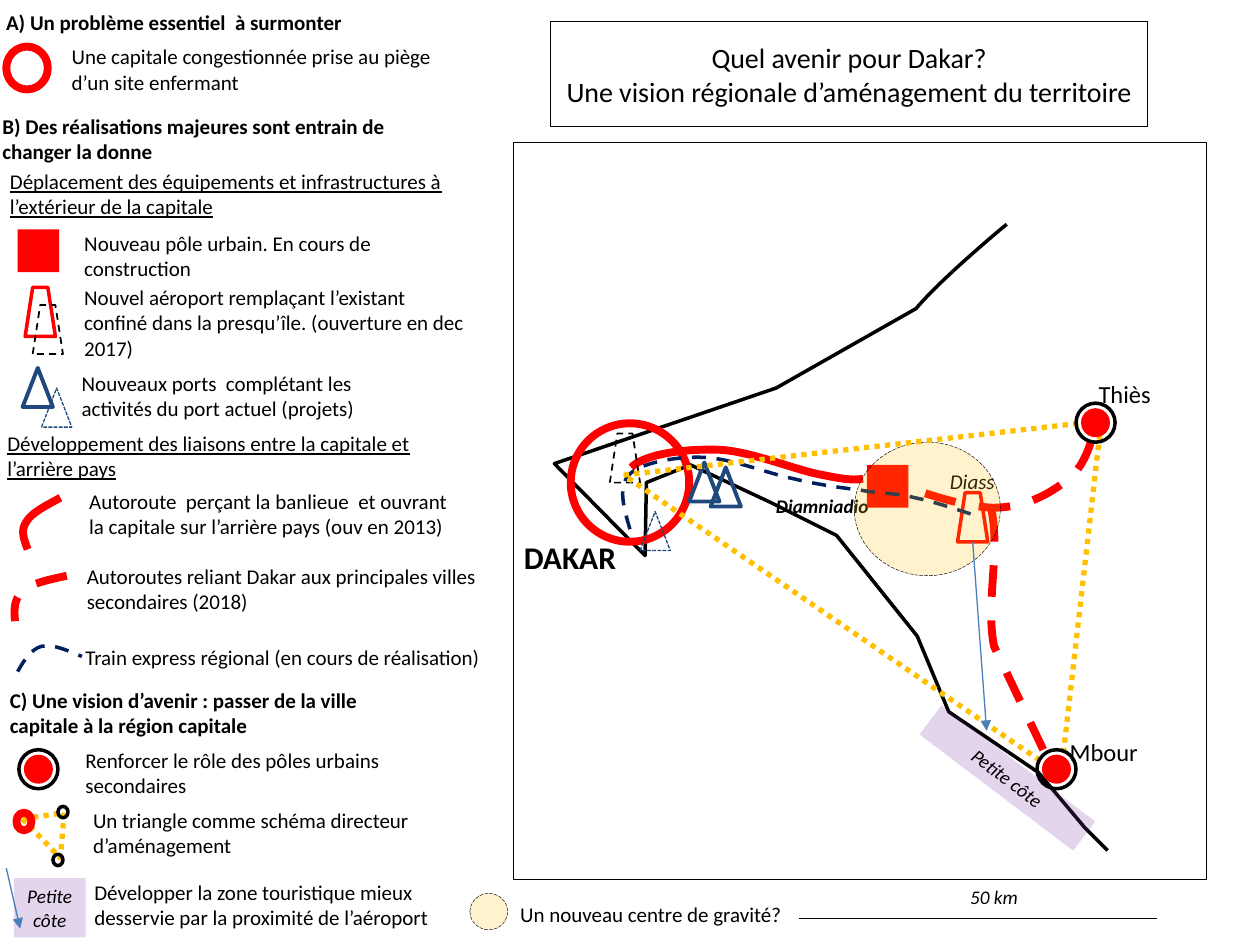
"""Builds the map and legend slide on the regional future of Dakar."""
from dataclasses import dataclass

from pptx import Presentation
from pptx import util as u
from pptx.dml.color import RGBColor
from pptx.enum import dml, shapes, text
from pptx.oxml import ns, xmlchemy


@dataclass(frozen=True)
class Pen:
    """An outline: colour, width in points and dash."""
    color: str
    width: float
    dash: object = None


class Theme:
    """Colours, outlines and type sizes of the slide."""
    font = "Calibri"
    black, red, gold, purple = "000000", "FF0000", "FFC000", "7030A0"
    navy, blue, arrow = "002060", "1F497D", "4B7EBC"
    title, city, place, legend, small = 16, 18, 14, 12, 11
    tint = 20
    coast = Pen(black, 2)
    frame = Pen(black, 0.25)
    border = Pen(black, 0.75)
    old_airport = Pen(black, 1, dml.MSO_LINE.DASH)
    new_airport = Pen(red, 2)
    road = Pen(red, 4.5)
    future_road = Pen(red, 4.5, dml.MSO_LINE.DASH)
    train = Pen(navy, 2, dml.MSO_LINE.DASH)
    old_port = Pen(blue, 0.75, dml.MSO_LINE.SQUARE_DOT)
    new_port = Pen(blue, 2.25)
    triangle = Pen(gold, 3, dml.MSO_LINE.ROUND_DOT)
    zone = Pen(black, 0.25, dml.MSO_LINE.LONG_DASH)
    access = Pen(arrow, 0.75)


KIND = shapes.MSO_SHAPE
AIRPORT, PORT, TOWN = (0.24, 0.39), (0.24, 0.31), (0.31, 0.31)

COAST = [(8.79, 6.75), (8.61, 6.57), (8.24, 6.13), (7.53, 5.65), (7.28, 5.05),
         (6.64, 4.25), (6.12, 3.99), (5.48, 3.69), (5.13, 3.83), (5.12, 4.41),
         (4.4, 3.68), (6.16, 3.08), (7.27, 2.45), (7.48, 2.2, 7.99, 1.78, 7.99, 1.78)]
MOTORWAY = [(5.01, 3.71), (5.12, 3.6, 5.45, 3.56, 5.71, 3.57),
            (5.96, 3.58, 6.34, 3.74, 6.53, 3.77), (6.72, 3.81, 6.79, 3.81, 6.85, 3.8)]
ROAD_THIES = [(6.93, 3.77), (7.28, 3.9, 7.62, 4.02, 7.88, 4.03),
              (8.14, 4.03, 8.33, 3.92, 8.47, 3.81), (8.6, 3.71, 8.65, 3.55, 8.69, 3.4)]
ROAD_MBOUR = [(7.87, 4.05), (7.94, 4.4, 7.82, 4.79, 7.89, 5.13), (8.28, 5.95)]
TRAIN = [(5, 4.2), (4.95, 4.03, 4.9, 3.86, 5, 3.76), (5.1, 3.67, 5.38, 3.62, 5.59, 3.63),
         (5.81, 3.64, 6.1, 3.76, 6.3, 3.8), (6.51, 3.85, 6.67, 3.87, 6.83, 3.89),
         (6.99, 3.92, 7.11, 3.91, 7.26, 3.95), (7.41, 3.98, 7.58, 4.04, 7.74, 4.09)]
MASTER_PLAN = [(4.95, 3.77), (8.74, 3.34), (8.42, 6.15)]

KEY_MOTORWAY = [(0.22, 4.36), (0.19, 4.28, 0.16, 4.21, 0.21, 4.14),
                (0.25, 4.07, 0.37, 4.01, 0.48, 3.95)]
KEY_ROAD = [(0.53, 4.57), (0.39, 4.6, 0.25, 4.63, 0.18, 4.69),
            (0.11, 4.75, 0.11, 4.85, 0.12, 4.93)]
KEY_TRAIN = [(0.14, 5.33), (0.19, 5.24, 0.25, 5.15, 0.33, 5.13),
             (0.42, 5.11, 0.53, 5.16, 0.65, 5.21)]
KEY_PLAN = [(0.18, 6.5), (0.51, 6.45), (0.48, 6.81)]

HEADINGS = [("A) Un problème essentiel  à surmonter", -0.05, 0.03, 2.9, 0.3),
            ("B) Des réalisations majeures sont entrain de changer la donne", -0.08, 0.85, 3.79, 0.5),
            ("C) Une vision d’avenir : passer de la ville capitale à la région capitale",
             -0.02, 5.41, 3.44, 0.5)]
SUBHEADINGS = [("Déplacement des équipements et infrastructures à l’extérieur de la capitale",
                -0.02, 1.29, 3.81, 0.5),
               ("Développement des liaisons entre la capitale et l’arrière pays", -0.04, 3.37, 3.75, 0.5)]
ENTRIES = [
    ("Une capitale congestionnée prise au piège d’un site enfermant", 0.47, 0.3, 3.26, 0.5),
    ("Nouveau pôle urbain. En cours de construction", 0.57, 1.78, 3.31, 0.5),
    ("Nouvel aéroport remplaçant l’existant confiné dans la presqu’île. (ouverture en dec 2017)",
     0.57, 2.21, 3.23, 0.71),
    ("Nouveaux ports  complétant les activités du port actuel (projets)", 0.55, 2.89, 2.79, 0.5),
    ("Autoroute  perçant la banlieue  et ouvrant la capitale sur l’arrière pays (ouv en 2013)",
     0.61, 3.83, 3.1, 0.5),
    ("Autoroutes reliant Dakar aux principales villes secondaires (2018)", 0.59, 4.42, 3.35, 0.5),
    ("Renforcer le rôle des pôles urbains secondaires", 0.58, 5.88, 3.02, 0.5),
    ("Un triangle comme schéma directeur d’aménagement", 0.64, 6.36, 3.14, 0.5),
    ("Développer la zone touristique mieux desservie par la proximité de l’aéroport",
     0.65, 6.93, 3.02, 0.5),
    ("Un nouveau centre de gravité?", 4.03, 7.11, 2.83, 0.3)]


def draw_line(line, pen):
    """Applies a pen to an outline, or hides it."""
    if pen is None:
        line.fill.background()
        return
    line.color.rgb = RGBColor.from_string(pen.color)
    line.width = u.Pt(pen.width)
    if pen.dash:
        line.dash_style = pen.dash


def write(box, words, size, wrap=True, align=None, **style):
    """Fills a text frame and formats its runs."""
    frame = box.text_frame
    frame.text = words
    frame.word_wrap = wrap
    frame.auto_size = text.MSO_AUTO_SIZE.SHAPE_TO_FIT_TEXT
    for para in frame.paragraphs:
        para.alignment = align
        for span in para.runs:
            span.font.name, span.font.size = Theme.font, u.Pt(size)
            span.font.color.rgb = RGBColor.from_string(Theme.black)
            for name, value in style.items():
                setattr(span.font, name, value)


def add_label(canvas, words, x, y, w, h, size=Theme.legend, **style):
    """Adds a text box."""
    box = canvas.add_textbox(*map(u.Inches, (x, y, w, h)))
    write(box, words, size, **style)


def add_mark(canvas, kind, x, y, w, h, pen=None, fill=None, alpha=None):
    """Adds a preset shape, optionally tinted."""
    mark = canvas.add_shape(kind, *map(u.Inches, (x, y, w, h)))
    mark.shadow.inherit = False
    draw_line(mark.line, pen)
    if fill is None:
        mark.fill.background()
        return mark
    mark.fill.solid()
    mark.fill.fore_color.rgb = RGBColor.from_string(fill)
    if alpha:
        color = mark.element.xpath("./p:spPr/a:solidFill/a:srgbClr")[0]
        xmlchemy.OxmlElement("a:alpha")
        color.append(color.makeelement(ns.qn("a:alpha"), {"val": str(alpha * 1000)}))
    return mark


def add_route(canvas, steps, pen, close=False):
    """Adds an outline whose steps are points or Bézier triples."""
    start, *rest = steps
    points = [step[i:i + 2] for step in rest for i in range(0, len(step), 2)]
    builder = canvas.build_freeform(*map(u.Inches, start), scale=1.0)
    builder.add_line_segments([tuple(map(u.Inches, point)) for point in points], close=close)
    route = builder.convert_to_shape()
    segments = iter(route.element.xpath(".//a:path/a:lnTo"))
    for step in rest:
        segment = next(segments)
        if len(step) == 6:
            curve = xmlchemy.OxmlElement("a:cubicBezTo")
            segment.addprevious(curve)
            for piece in (segment, next(segments), next(segments)):
                curve.append(piece[0])
                piece.getparent().remove(piece)
    route.shadow.inherit = False
    route.fill.background()
    draw_line(route.line, pen)


def add_straight(canvas, start, end, pen, arrow=False):
    """Adds a straight connector, optionally with an arrowhead."""
    link = canvas.add_connector(shapes.MSO_CONNECTOR.STRAIGHT, *map(u.Inches, start + end))
    draw_line(link.line, pen)
    link.element.spPr.append(xmlchemy.OxmlElement("a:effectLst"))
    if arrow:
        head = xmlchemy.OxmlElement("a:tailEnd")
        head.set("type", "triangle")
        link.line._get_or_add_ln().append(head)


def add_town(canvas, x, y):
    """Adds a secondary town: a red dot in a black ring."""
    add_mark(canvas, KIND.OVAL, x, y, *TOWN, pen=Theme.coast)
    add_mark(canvas, KIND.OVAL, x + 0.04, y + 0.04, 0.23, 0.23, fill=Theme.red)


def add_tourist_area(canvas, x, y, w, h, angle=0):
    """Adds the tinted block naming the tourist coast."""
    area = add_mark(canvas, KIND.RECTANGLE, x, y, w, h, fill=Theme.purple, alpha=Theme.tint)
    area.rotation = angle
    write(area, "Petite côte", Theme.small, align=text.PP_ALIGN.CENTER, italic=True)


def add_title(title):
    """Moves and formats the title placeholder."""
    title.left, title.top, title.width, title.height = map(u.Inches, (4.37, 0.27, 4.74, 0.64))
    draw_line(title.line, Theme.border)
    write(title, "Quel avenir pour Dakar?\nUne vision régionale d’aménagement du territoire",
          Theme.title, wrap=False, align=text.PP_ALIGN.CENTER)


def add_map(canvas):
    """Draws the map with its places and routes."""
    add_route(canvas, COAST, Theme.coast)
    add_mark(canvas, KIND.TRAPEZOID, 7.6, 3.91, *AIRPORT, pen=Theme.new_airport)
    add_route(canvas, MOTORWAY, Theme.road)
    add_mark(canvas, KIND.OVAL, 4.53, 3.36, 0.94, 0.94, pen=Theme.road)
    add_mark(canvas, KIND.TRAPEZOID, 4.84, 3.44, *AIRPORT, pen=Theme.old_airport)
    add_label(canvas, "DAKAR", 4.06, 4.22, 0.94, 0.4, Theme.city, wrap=False, bold=True)
    add_label(canvas, "Diass", 7.44, 3.67, 0.56, 0.3, wrap=False, italic=True)
    add_label(canvas, "Thiès", 8.62, 2.96, 0.62, 0.34, Theme.place, wrap=False)
    add_label(canvas, "Mbour", 8.39, 5.8, 0.75, 0.34, Theme.place, wrap=False)
    add_straight(canvas, (6.34, 7.29), (9.18, 7.29), Theme.border)
    add_label(canvas, "50 km", 7.6, 6.98, 0.59, 0.29, Theme.small, wrap=False, italic=True)
    for road in (ROAD_THIES, ROAD_MBOUR):
        add_route(canvas, road, Theme.future_road)
    add_mark(canvas, KIND.ISOSCELES_TRIANGLE, 5.08, 4.06, *PORT, pen=Theme.old_port)
    add_label(canvas, "Diamniadio", 6.06, 3.87, 0.94, 0.29, Theme.small,
              wrap=False, bold=True, italic=True)
    add_mark(canvas, KIND.RECTANGLE, 6.88, 3.69, 0.33, 0.34, fill=Theme.red)
    add_route(canvas, TRAIN, Theme.train)
    for x, y in ((5.47, 3.67), (5.64, 3.71)):
        add_mark(canvas, KIND.ISOSCELES_TRIANGLE, x, y, *PORT, pen=Theme.new_port)
    add_tourist_area(canvas, 7.23, 6.03, 1.53, 0.29, 37.1)
    add_mark(canvas, KIND.OVAL, 6.78, 3.51, 1.16, 1.06, Theme.zone, Theme.gold, Theme.tint)
    add_route(canvas, MASTER_PLAN, Theme.triangle, close=True)
    add_straight(canvas, (7.72, 4.3), (7.83, 5.8), Theme.access, arrow=True)
    add_town(canvas, 8.54, 3.2)
    add_town(canvas, 8.23, 5.95)
    add_mark(canvas, KIND.RECTANGLE, 4.07, 1.13, 5.5, 5.85, pen=Theme.frame)


def add_legend(canvas):
    """Draws the legend texts and their symbols."""
    for entry in HEADINGS:
        add_label(canvas, *entry, bold=True)
    for entry in SUBHEADINGS:
        add_label(canvas, *entry, underline=True)
    for entry in ENTRIES:
        add_label(canvas, *entry)
    add_label(canvas, "Train express régional (en cours de réalisation)",
              0.58, 5.07, 3.37, 0.3, wrap=False)
    add_mark(canvas, KIND.OVAL, 0.05, 0.37, 0.33, 0.34, pen=Theme.road)
    add_mark(canvas, KIND.RECTANGLE, 0.14, 1.82, 0.33, 0.34, fill=Theme.red)
    airports = canvas.add_group_shape().shapes
    add_mark(airports, KIND.TRAPEZOID, 0.2, 2.28, *AIRPORT, pen=Theme.new_airport)
    add_mark(airports, KIND.TRAPEZOID, 0.26, 2.42, *AIRPORT, pen=Theme.old_airport)
    ports = canvas.add_group_shape().shapes
    add_mark(ports, KIND.ISOSCELES_TRIANGLE, 0.18, 2.92, *PORT, pen=Theme.new_port)
    add_mark(ports, KIND.ISOSCELES_TRIANGLE, 0.33, 3.08, *PORT, pen=Theme.old_port)
    add_route(canvas, KEY_MOTORWAY, Theme.road)
    add_route(canvas, KEY_ROAD, Theme.future_road)
    add_route(canvas, KEY_TRAIN, Theme.train)
    add_town(canvas.add_group_shape().shapes, 0.15, 5.95)
    plan = canvas.add_group_shape().shapes
    add_route(plan, KEY_PLAN, Theme.triangle, close=True)
    for x, y in ((0.46, 6.4), (0.42, 6.78)):
        add_mark(plan, KIND.OVAL, x, y, 0.08, 0.09, pen=Theme.coast)
    add_mark(plan, KIND.OVAL, 0.13, 6.45, 0.12, 0.14, pen=Theme.road)
    add_tourist_area(canvas, 0.11, 6.97, 0.57, 0.47)
    add_straight(canvas, (0.05, 6.89), (0.16, 7.37), Theme.access, arrow=True)
    add_mark(canvas, KIND.OVAL, 3.73, 7.09, 0.3, 0.29, Theme.zone, Theme.gold, Theme.tint)


def main():
    """Builds and saves the deck."""
    deck = Presentation()
    deck.slide_width, deck.slide_height = u.Inches(10), u.Inches(7.5)
    page = deck.slides.add_slide(deck.slide_layouts[5])
    add_title(page.shapes.title)
    add_map(page.shapes)
    add_legend(page.shapes)
    deck.save("out.pptx")


if __name__ == "__main__":
    main()
